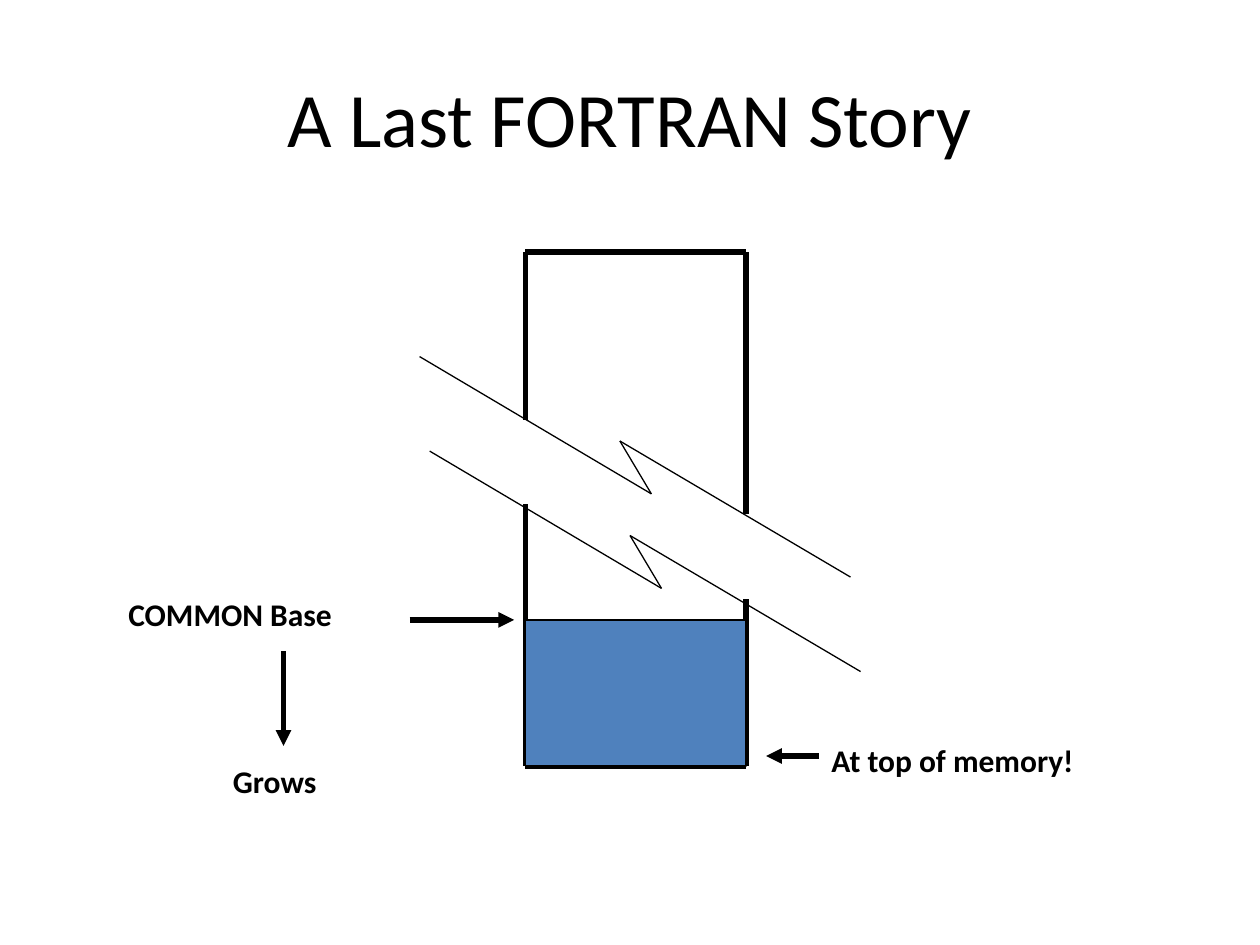
from itertools import pairwise

from pptx import Presentation
from pptx.dml.color import RGBColor
from pptx.enum.shapes import MSO_CONNECTOR as CONN, MSO_SHAPE as SHAPE
from pptx.enum.text import MSO_ANCHOR as ANCHOR, MSO_AUTO_SIZE as AUTO, PP_ALIGN as ALIGN
from pptx.oxml.ns import qn
from pptx.util import Inches, Pt
from lxml.etree import SubElement

BLACK = RGBColor(0x00, 0x00, 0x00)
BLUE = RGBColor(0x4F, 0x81, 0xBD)
LEFT, RIGHT, TOP, BASE, BOTTOM = 4.17, 5.92, 2, 4.92, 6.08
THICK, THIN = 3, 0.75


def write(tf, text, size, bold=False, align=ALIGN.LEFT):
    p = tf.paragraphs[0]
    p.alignment = align
    r = p.add_run()
    r.text = text
    for name, value in {"name": "Calibri", "size": Pt(size), "bold": bold}.items():
        setattr(r.font, name, value)
    r.font.color.rgb = BLACK


def add_title(s, text):
    sp = s.shapes.title
    box = {"left": 0.5, "top": 0.3, "width": 9, "height": 1.25}
    for name, value in box.items():
        setattr(sp, name, Inches(value))
    sp.text_frame.vertical_anchor = ANCHOR.MIDDLE
    write(sp.text_frame, text, 44, align=ALIGN.CENTER)


def add_label(s, text, x, y, w):
    sp = s.shapes.add_textbox(Inches(x), Inches(y), Inches(w), Inches(0.4))
    tf = sp.text_frame
    tf.word_wrap = True
    tf.auto_size = AUTO.SHAPE_TO_FIT_TEXT
    write(tf, text, 18, bold=True)


def add_line(s, start, end, width, arrow=False):
    ends = [Inches(v) for v in (*start, *end)]
    sp = s.shapes.add_connector(CONN.STRAIGHT, *ends)
    sp.line.color.rgb = BLACK
    sp.line.width = Pt(width)
    if arrow:
        SubElement(sp.line._get_or_add_ln(), qn("a:tailEnd"), type="triangle")
    SubElement(sp._element.spPr, qn("a:effectLst"))


def add_path(s, points, width):
    for start, end in pairwise(points):
        add_line(s, start, end, width)


def add_common_block(s):
    sp = s.shapes.add_shape(SHAPE.RECTANGLE, Inches(LEFT), Inches(BASE),
                            Inches(RIGHT - LEFT), Inches(BOTTOM - BASE))
    sp.shadow.inherit = False
    sp.fill.solid()
    sp.fill.fore_color.rgb = BLUE
    sp.line.color.rgb = BLACK
    sp.line.width = Pt(THIN)


def main():
    prs = Presentation()
    prs.slide_width, prs.slide_height = Inches(10), Inches(7.5)
    s = prs.slides.add_slide(prs.slide_layouts[5])
    add_title(s, "A Last FORTRAN Story")

    for left_end, right_end, edge in ((3.33, 4.08, TOP), (4, 4.75, BOTTOM)):
        add_path(s, [(LEFT, left_end), (LEFT, edge), (RIGHT, edge), (RIGHT, right_end)], THICK)

    tear = [(3.33, 2.83), (5.17, 3.92), (4.92, 3.5), (6.75, 4.58)]
    for dx, dy in ((0, 0), (0.08, 0.75)):
        add_path(s, [(x + dx, y + dy) for x, y in tear], THIN)

    add_common_block(s)

    for text, x, y, w in (("COMMON Base", 0.92, 4.67, 2.5),
                          ("Grows", 1.75, 6, 2),
                          ("At top of memory!", 6.5, 5.83, 3.25)):
        add_label(s, text, x, y, w)

    for start, end in (((3.25, BASE), (4.08, BASE)),
                       ((2.25, 5.17), (2.25, 5.92)),
                       ((6.5, 6), (6.08, 6))):
        add_line(s, start, end, THICK, arrow=True)

    prs.save("out.pptx")


if __name__ == "__main__":
    main()
